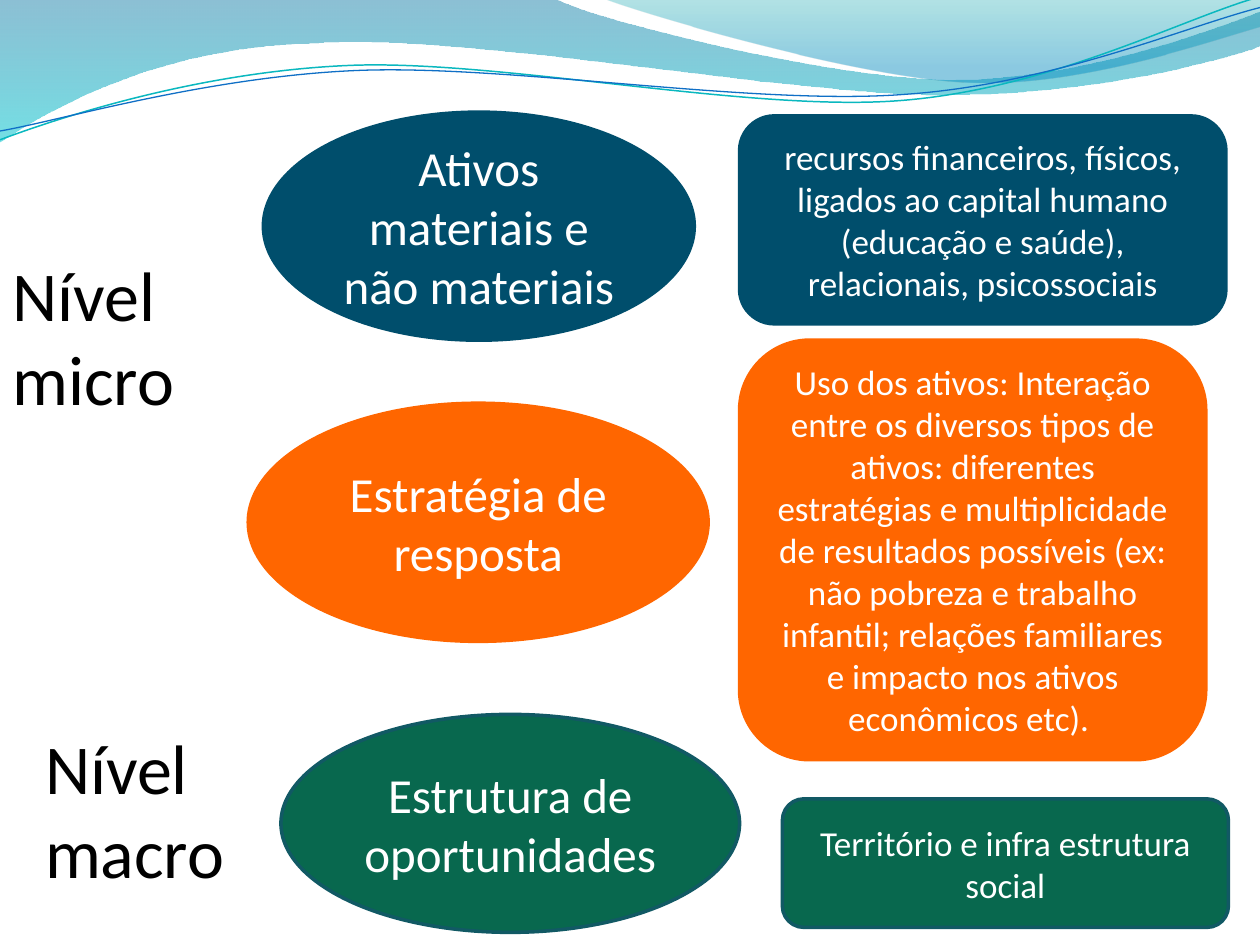
from lxml.etree import SubElement
from pptx import Presentation
from pptx.dml.color import RGBColor
from pptx.enum.shapes import MSO_SHAPE
from pptx.enum.text import MSO_ANCHOR, PP_ALIGN
from pptx.oxml.ns import qn
from pptx.util import Inches, Pt

FONT = "Calibri"
BLUE, ORANGE, GREEN, GREEN_EDGE = "004E6C", "FF6600", "08684E", "115964"

# Header waves: one point is a straight line, three points are a Bezier curve
WAVES = [
    {"start": (0, 0),
     "segments": [[(4.4, -0.01)],
                  [(4.76, 0.17), (6.64, 0.63), (7.58, 0.63)],
                  [(8.53, 0.63), (9.58, 0.26), (10, 0.09)],
                  [(10.01, 0.36)],
                  [(9.83, 0.44), (8.7, 0.76), (7.46, 0.75)],
                  [(6.22, 0.75), (3.82, 0.28), (2.57, 0.34)],
                  [(1.29, 0.36), (0.46, 0.83), (-0.01, 1.13)]],
     "stops": [(0, "0074A1", 45), (1, "00C6CF", 55)]},
    {"start": (4.79, -0.01),
     "segments": [[(5.09, 0.11), (6.82, 0.62), (7.69, 0.65)],
                  [(8.56, 0.69), (9.61, 0.32), (10, 0.21)],
                  [(10, 0)]],
     "stops": [(0, "00A1A9", 30), (0.8, "008BBF", 45)]},
    {"start": (0, 1.11),
     "segments": [[(0.48, 0.93), (1.58, 0.57), (2.77, 0.52)],
                  [(3.95, 0.47), (5.93, 0.89), (7.13, 0.8)],
                  [(8.33, 0.71), (9.38, 0.15), (9.98, -0.02)]],
     "line": ("0AB8BF", 0.85)},
    {"start": (0, 1.04),
     "segments": [[(0.47, 0.96), (1.64, 0.61), (2.83, 0.56)],
                  [(4.03, 0.51), (5.97, 0.84), (7.17, 0.75)],
                  [(8.36, 0.67), (9.41, 0.21), (10, 0.06)]],
     "line": ("0F6FC6", 0.75)},
]

# Concepts and their explanations: text, box, fill, edge
CONCEPTS = [
    ("Ativos materiais e não materiais ", (2.09, 0.89, 3.42, 1.81), BLUE, BLUE),
    ("Estratégia de resposta", (1.97, 3.2, 3.65, 1.89), ORANGE, ORANGE),
    ("Estrutura de oportunidades", (2.23, 5.67, 3.64, 1.73), GREEN, GREEN_EDGE),
]
EXPLANATIONS = [
    ("recursos financeiros, físicos, ligados ao capital humano (educação e saúde), "
     "relacionais, psicossociais", (5.87, 0.92, 3.86, 1.65), BLUE, BLUE),
    ("Uso dos ativos: Interação entre os diversos tipos de ativos: diferentes "
     "estratégias e multiplicidade de resultados possíveis (ex: não pobreza e "
     "trabalho infantil; relações familiares e impacto nos ativos econômicos etc). ",
     (5.87, 2.7, 3.7, 3.33), ORANGE, ORANGE),
    ("Território e infra estrutura social", (6.21, 6.34, 3.54, 1.02), GREEN, GREEN_EDGE),
]
LEVELS = [("Nível micro", (0, 1.95, 2.59, 1.45)),
          ("Nível macro", (0.26, 5.7, 2.59, 1.45))]


def color(hex_value):
    return RGBColor.from_string(hex_value)


def bend_segments(shape, segments):
    """Turn the straight segments that have control points into curves."""
    lines = list(shape._element.spPr.iter(qn("a:lnTo")))
    for line, segment in zip(lines, segments):
        if len(segment) == 1:
            continue
        line.tag = qn("a:cubicBezTo")
        for index, (x, y) in enumerate(segment[:-1]):
            point = SubElement(line, qn("a:pt"))
            point.set("x", str(Inches(x) - shape.left))
            point.set("y", str(Inches(y) - shape.top))
            line.insert(index, point)


def add_wave(slide, start, segments, stops=None, line=None):
    ends = [(Inches(x), Inches(y)) for x, y in (segment[-1] for segment in segments)]
    builder = slide.shapes.build_freeform(*map(Inches, start))
    builder.add_line_segments(ends, close=stops is not None)
    shape = builder.convert_to_shape()
    bend_segments(shape, segments)
    shape.shadow.inherit = False
    if line:
        shape.fill.background()
        shape.line.color.rgb = color(line[0])
        shape.line.width = Pt(line[1])
        return
    shape.line.fill.background()
    shape.fill.gradient()
    shape.fill.gradient_angle = 270
    for stop, (position, hex_value, _) in zip(shape.fill.gradient_stops, stops):
        stop.position = position
        stop.color.rgb = color(hex_value)
    # Opacity of each gradient stop
    stop_colors = list(shape._element.spPr.iter(qn("a:srgbClr")))
    for element, (_, _, opacity) in zip(stop_colors, stops):
        SubElement(element, qn("a:alpha")).set("val", str(opacity * 1000))


def write_text(shape, text, size, hex_value, alignment, anchor):
    frame = shape.text_frame
    frame.word_wrap = True
    frame.vertical_anchor = anchor
    paragraph = frame.paragraphs[0]
    paragraph.alignment = alignment
    run = paragraph.add_run()
    run.text = text
    run.font.name = FONT
    run.font.size = Pt(size)
    run.font.color.rgb = color(hex_value)


def add_box(slide, kind, size, text, box, fill, edge):
    shape = slide.shapes.add_shape(kind, *map(Inches, box))
    shape.shadow.inherit = False
    shape.fill.solid()
    shape.fill.fore_color.rgb = color(fill)
    shape.line.color.rgb = color(edge)
    shape.line.width = Pt(2)
    write_text(shape, text, size, "FFFFFF", PP_ALIGN.CENTER, MSO_ANCHOR.MIDDLE)


def main():
    presentation = Presentation()
    presentation.slide_width, presentation.slide_height = Inches(10), Inches(7.5)
    slide = presentation.slides.add_slide(presentation.slide_layouts[6])

    # Header decoration
    for wave in WAVES:
        add_wave(slide, **wave)

    # Concepts, explanations and level labels
    for concept in CONCEPTS:
        add_box(slide, MSO_SHAPE.OVAL, 28, *concept)
    for explanation in EXPLANATIONS:
        add_box(slide, MSO_SHAPE.ROUNDED_RECTANGLE, 20, *explanation)
    for text, box in LEVELS:
        label = slide.shapes.add_textbox(*map(Inches, box))
        write_text(label, text, 40, "000000", PP_ALIGN.LEFT, MSO_ANCHOR.TOP)

    presentation.save("out.pptx")


if __name__ == "__main__":
    main()
